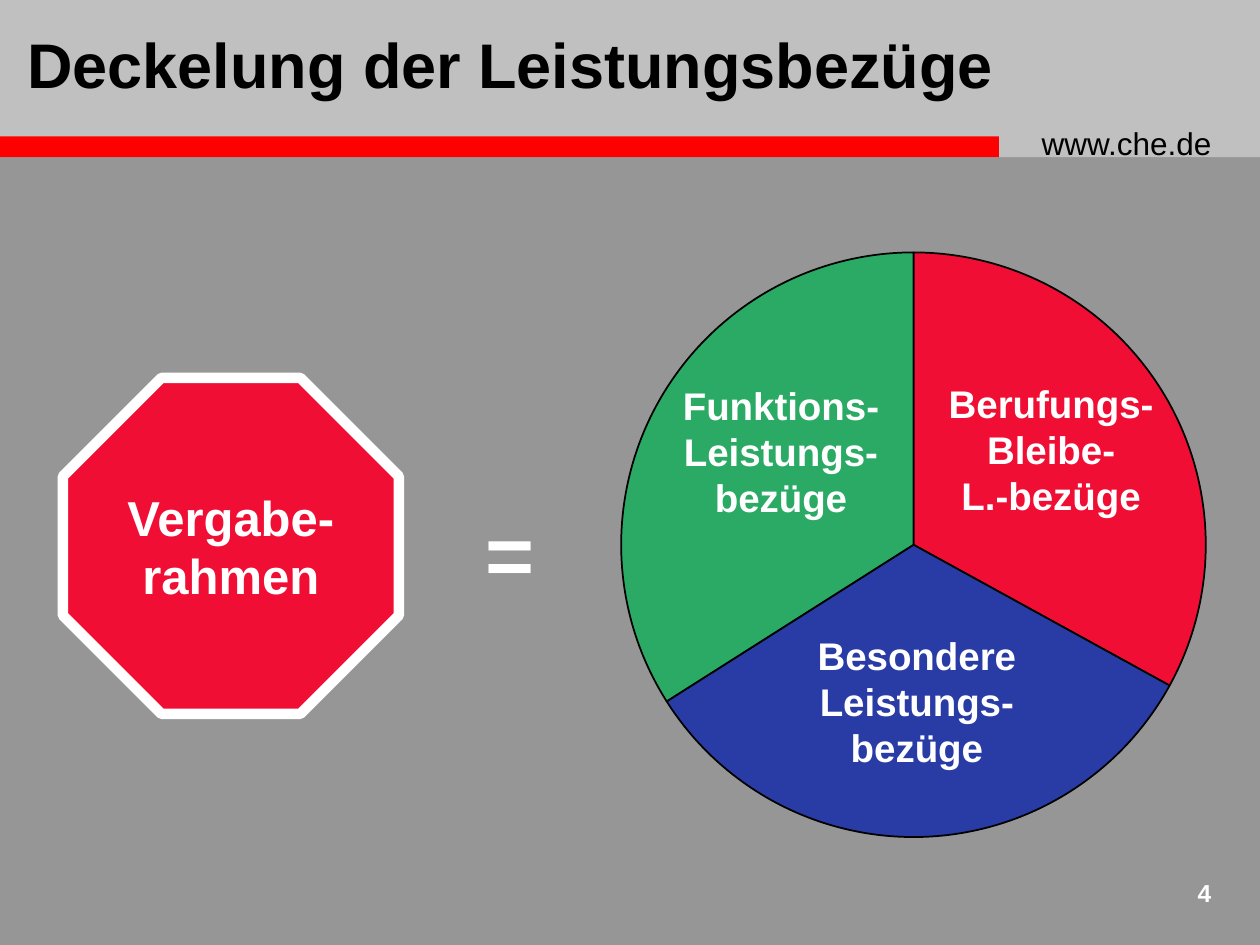
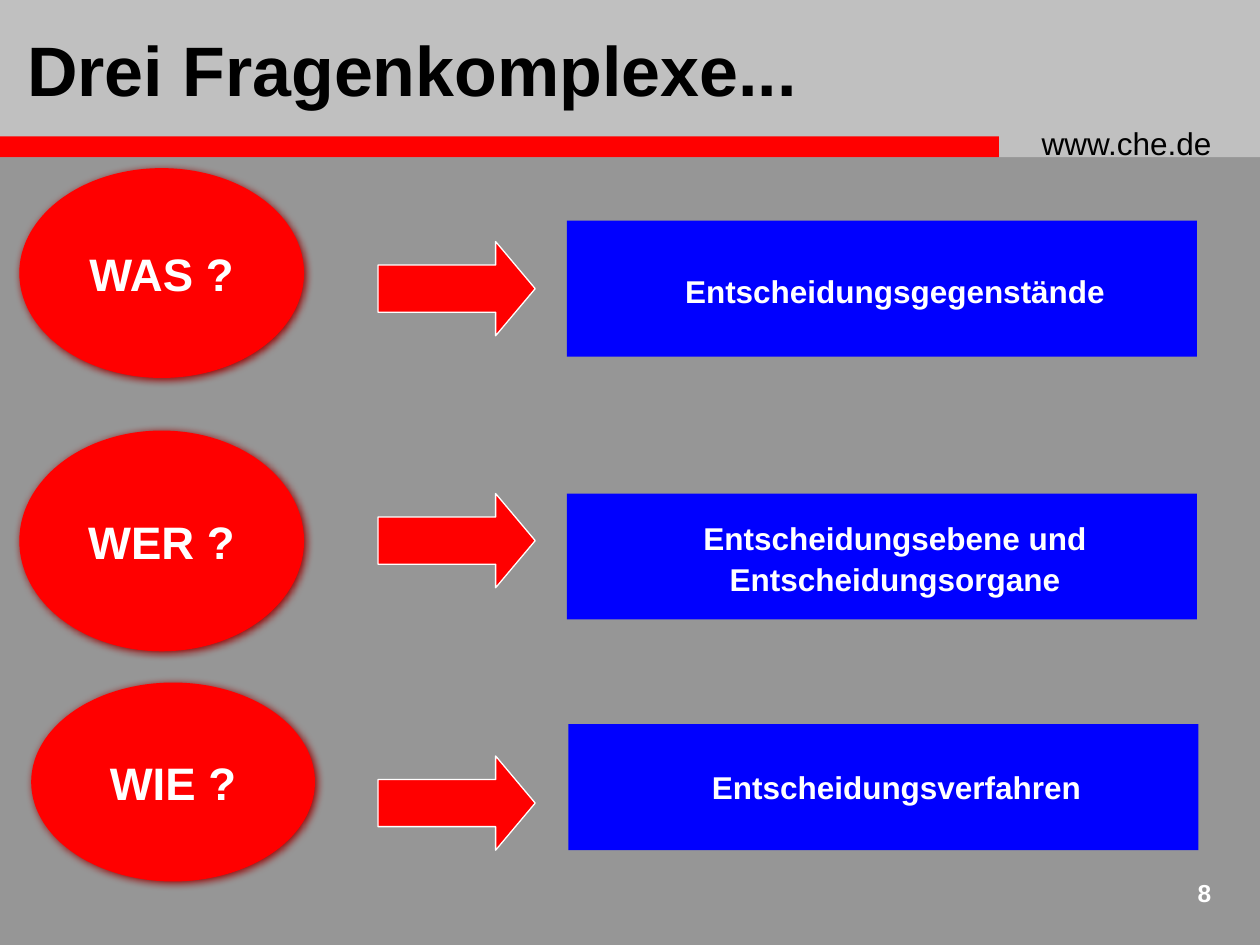
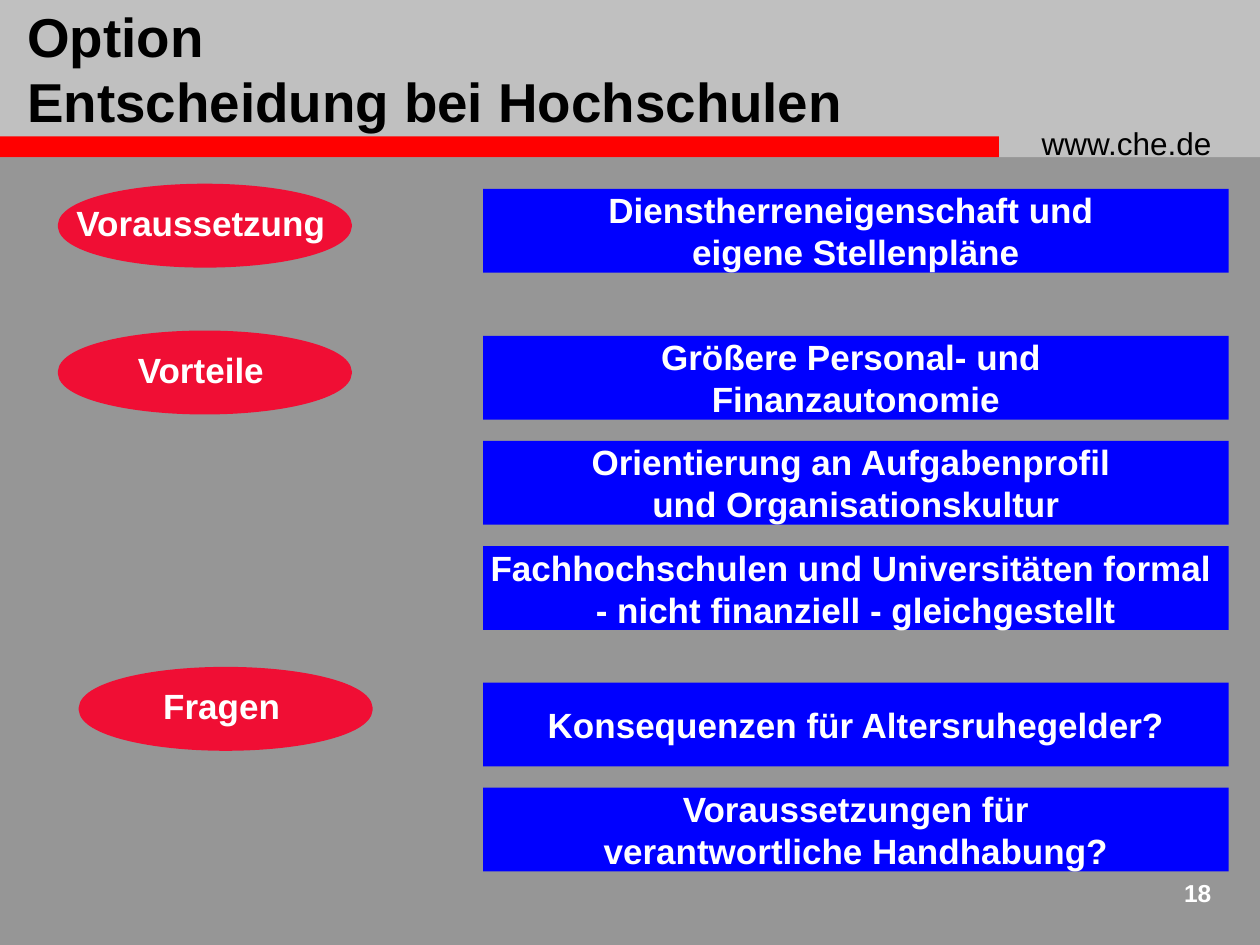
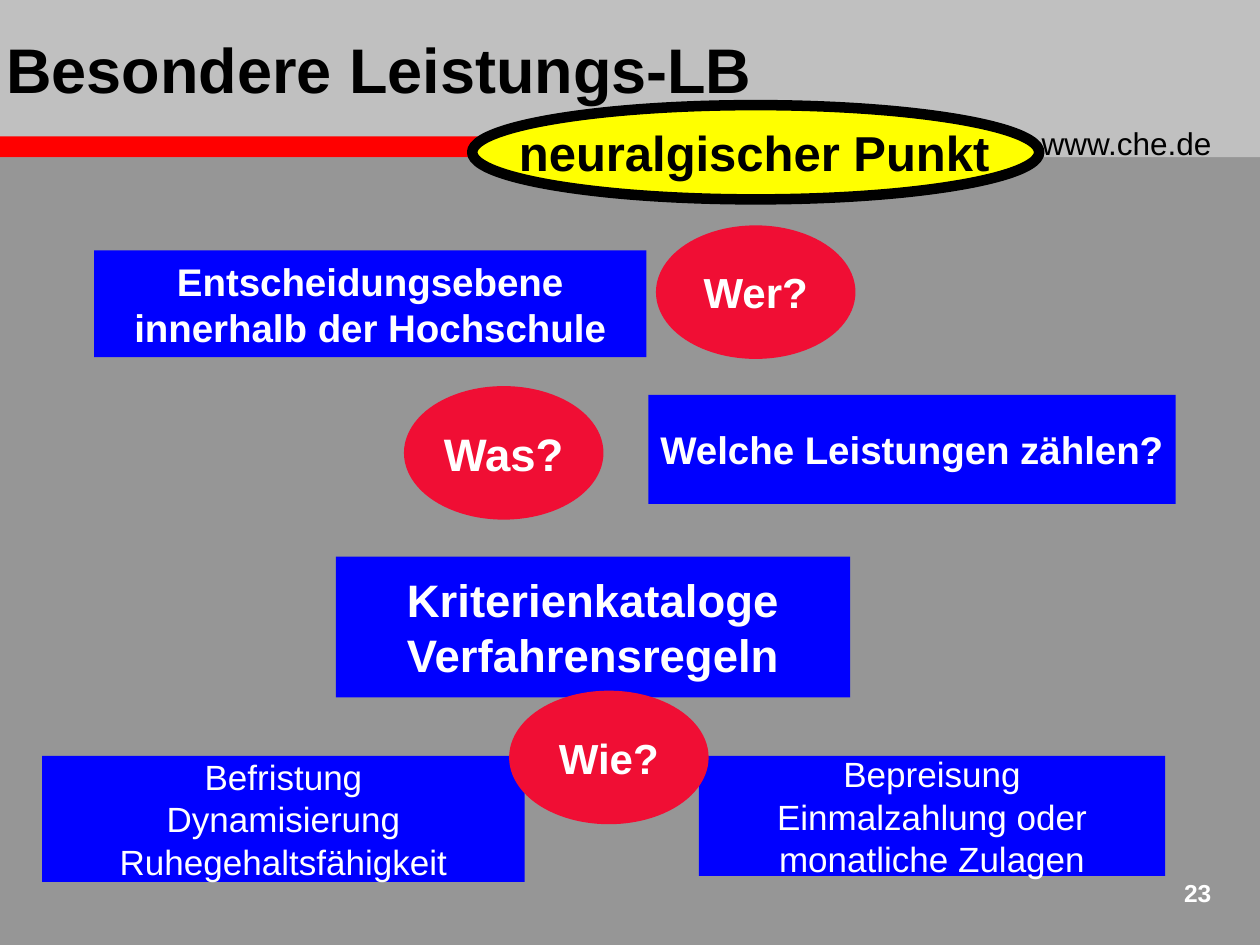
from lxml import etree
from pptx import Presentation
from pptx import util as u
from pptx.chart.data import CategoryChartData
from pptx.dml.color import RGBColor
from pptx.enum import chart as charts
from pptx.enum import shapes, text
from pptx.oxml import parse_xml
from pptx.oxml.ns import nsdecls, qn

FONT = "Arial"
COLORS = {
    "background": "969696",
    "header": "C0C0C0",
    "red": "FF0000",
    "crimson": "F00E34",
    "blue": "0000FF",
    "navy": "293BA5",
    "green": "2AAA64",
    "yellow": "FFFF00",
    "black": "000000",
    "white": "FFFFFF",
    "shadow": "990000",
}
RECTANGLE = shapes.MSO_SHAPE.RECTANGLE
OVAL = shapes.MSO_SHAPE.OVAL
ALIGN = text.PP_ALIGN
ANCHOR = text.MSO_ANCHOR


def color(name):
    return RGBColor.from_string(COLORS[name])


def lengths(*values):
    return [u.Cm(value) for value in values]


def write_text(shape, content, size=20, ink="white", bold=True, align=ALIGN.CENTER,
               anchor=ANCHOR.MIDDLE, wrap=False, inset=0, extra_right=0, extra_bottom=0,
               line_spacing=None, indent=None):
    frame = shape.text_frame
    frame.auto_size = text.MSO_AUTO_SIZE.NONE
    frame.word_wrap = wrap
    frame.vertical_anchor = anchor
    frame.margin_left = frame.margin_top = u.Cm(inset)
    frame.margin_right = u.Cm(inset + extra_right)
    frame.margin_bottom = u.Cm(inset + extra_bottom)
    frame.text = content
    for paragraph in frame.paragraphs:
        paragraph.alignment = align
        if line_spacing:
            paragraph.line_spacing = line_spacing
        if indent:
            properties = paragraph._p.get_or_add_pPr()
            properties.set("marL", "0")
            properties.set("indent", str(u.Cm(indent)))
        for run in paragraph.runs:
            run.font.name = FONT
            run.font.size = u.Pt(size)
            run.font.bold = bold
            run.font.color.rgb = color(ink)


def add_text(slide, box, content, **format):
    shape = slide.shapes.add_textbox(*lengths(*box))
    write_text(shape, content, **{"inset": 0.13, **format})
    return shape


def add_box(slide, kind, box, fill, content="", line=None, line_width=6, **format):
    shape = slide.shapes.add_shape(kind, *lengths(*box))
    shape.shadow.inherit = False
    shape.fill.solid()
    shape.fill.fore_color.rgb = color(fill)
    if line:
        shape.line.color.rgb = color(line)
        shape.line.width = u.Pt(line_width)
    else:
        shape.line.fill.background()
    if content:
        write_text(shape, content, **format)
    return shape


def add_answer(slide, box, content, **format):
    return add_box(slide, RECTANGLE, box, "blue", content, **format)


def add_keyword(slide, box, content, **format):
    return add_box(slide, OVAL, box, "crimson", content, line="crimson", **format)


def add_glow(shape):
    effects = shape.element.spPr.find(qn("a:effectLst"))
    glow = etree.SubElement(effects, qn("a:outerShdw"), blurRad=str(u.Pt(5)),
                            dist=str(u.Pt(1.4)), dir="2700000")
    etree.SubElement(glow, qn("a:srgbClr"), val=COLORS["shadow"])


def format_wedge(wedge, fill):
    wedge.fill.solid()
    wedge.fill.fore_color.rgb = color(fill)
    wedge.line.color.rgb = color("black")
    wedge.line.width = u.Pt(1)


def add_pie(slide, box, rows, fills):
    data = CategoryChartData()
    data.categories = [str(number + 1) for number in range(len(fills))]
    for number, values in enumerate(rows, 1):
        data.add_series(f"Series {number}", values)
    chart = slide.shapes.add_chart(charts.XL_CHART_TYPE.PIE, *lengths(*box), data).chart
    chart.has_legend = False
    chart.has_title = False
    chart.font.name = FONT
    chart.font.size = u.Pt(10)
    chart.font.color.rgb = color("background")
    plot = chart.plots[0]
    plot.vary_by_categories = False
    series = plot.series[0]
    format_wedge(series.format, fills[0])
    for index, fill in enumerate(fills):
        format_wedge(series.points[index].format, fill)
    chart.replace_data(data)
    area = chart._chartSpace.chart.plotArea
    for layout in area.findall(qn("c:layout")):
        area.remove(layout)
    area.insert(0, parse_xml(
        f'<c:layout {nsdecls("c")}><c:manualLayout><c:layoutTarget val="inner"/>'
        '<c:xMode val="edge"/><c:yMode val="edge"/><c:x val="0.005"/><c:y val="0.005"/>'
        '<c:w val="0.99"/><c:h val="0.988"/></c:manualLayout></c:layout>'))


def prepare_layout(layout, slide):
    fill = layout.background.fill
    fill.solid()
    fill.fore_color.rgb = color("background")
    shared = [
        add_box(slide, RECTANGLE, (0, 0, 25.4, 3.17), "header"),
        add_box(slide, RECTANGLE, (0, 2.75, 20.14, 0.42), "red"),
        add_text(slide, (20.87, 2.37, 4.19, 0.97), "www.che.de", size=18, ink="black",
                 bold=False, align=ALIGN.LEFT, anchor=ANCHOR.TOP, wrap=True),
    ]
    for shape in shared:
        layout.shapes.element.append(shape.element)


def add_slide(presentation, title, number, size=36, left=0.42, line_spacing=None):
    layout = presentation.slide_layouts[5]
    slide = presentation.slides.add_slide(layout)
    if len(presentation.slides) == 1:
        prepare_layout(layout, slide)
    heading = slide.shapes.title
    heading.left, heading.top, heading.width, heading.height = lengths(left, 0, 20.52, 2.75)
    write_text(heading, title, size=size, ink="black", align=ALIGN.LEFT, wrap=True,
               inset=0.13, line_spacing=line_spacing)
    width = 0.28 + 0.28 * len(number)
    add_text(slide, (24.55 - width, 17.58, width, 0.81), number, size=14,
             align=ALIGN.RIGHT, anchor=ANCHOR.TOP)
    return slide


def build_cap(presentation):
    slide = add_slide(presentation, "Deckelung der Leistungsbezüge", "4", line_spacing=0.9)
    add_pie(slide, (12.45, 5.03, 11.93, 11.93),
            ((33, 33, 34), (29, 37, 33), (33, 34, 33)), ("crimson", "navy", "green"))
    for left, top, width, label in (
        (13.61, 7.61, 4.27, "Funktions-\nLeistungs-\nbezüge"),
        (18.98, 7.57, 4.42, "Berufungs-\nBleibe-\nL.-bezüge"),
        (16.34, 12.65, 4.29, "Besondere\nLeistungs-\nbezüge"),
    ):
        add_text(slide, (left, top, width, 2.97), label, size=22)
    add_box(slide, shapes.MSO_SHAPE.OCTAGON, (1.27, 7.62, 6.77, 6.77), "crimson",
            "Vergabe-\nrahmen", line="white", size=28)
    add_text(slide, (9.77, 10.06, 1.02, 2.13), "=", size=48)


def build_questions(presentation):
    slide = add_slide(presentation, "Drei Fragenkomplexe...", "8", size=40)
    for left, top, height, answer, spacing in (
        (11.43, 4.45, 2.74, "Entscheidungsgegenstände", 1.1),
        (11.43, 9.95, 2.54, "Entscheidungsebene und\nEntscheidungsorgane", 1.1),
        (11.46, 14.6, 2.54, "Entscheidungsverfahren", None),
    ):
        add_answer(slide, (left, top, 12.7, height), answer, size=18,
                   line_spacing=spacing, indent=0.53)
    for question, box, arrow_top in (
        ("WAS ?", (0.39, 3.39, 5.74, 4.23), 4.87),
        ("WER ?", (0.39, 8.68, 5.74, 4.45), 9.95),
        ("WIE ?", (0.63, 13.76, 5.72, 4.01), 15.24),
    ):
        add_glow(add_box(slide, OVAL, box, "red", question, size=26))
        arrow = add_box(slide, shapes.MSO_SHAPE.RIGHT_ARROW, (7.62, arrow_top, 3.17, 1.9),
                        "red", line="white", line_width=0.75)
        arrow.adjustments[1] = 0.42


def build_option(presentation):
    slide = add_slide(presentation, "Option\vEntscheidung bei Hochschulen", "18", size=31.3)
    sections = (
        ("Voraussetzung", 1.27, 3.81, 3.81, ("Dienstherreneigenschaft und \neigene Stellenpläne",)),
        ("Vorteile", 1.27, 6.77, 6.77, (
            "Größere Personal- und \nFinanzautonomie",
            "Orientierung an Aufgabenprofil \nund Organisationskultur",
            "Fachhochschulen und Universitäten formal \n- nicht finanziell - gleichgestellt",
        )),
        ("Fragen", 1.69, 13.55, 13.76, (
            "Konsequenzen für Altersruhegelder?",
            "Voraussetzungen für\nverantwortliche Handhabung?",
        )),
    )
    for keyword, left, top, first_answer, answers in sections:
        add_keyword(slide, (left, top, 5.72, 1.48), keyword,
                    extra_right=0.16, extra_bottom=0.12)
        for row, answer in enumerate(answers):
            add_answer(slide, (9.74, first_answer + 2.12 * row, 15.03, 1.69), answer)


def build_special(presentation):
    slide = add_slide(presentation, "Besondere Leistungs-LB", "23", left=0)
    for box, answer, size, bold in (
        ((1.9, 5.05, 11.13, 2.15), "Entscheidungsebene\ninnerhalb der Hochschule", 22, True),
        ((13.07, 7.96, 10.63, 2.2), "Welche Leistungen zählen?", 22, True),
        ((0.85, 15.24, 9.73, 2.54), "Befristung\nDynamisierung\nRuhegehaltsfähigkeit", 20, False),
        ((14.09, 15.24, 9.4, 2.42), "Bepreisung\nEinmalzahlung oder\nmonatliche Zulagen", 20, False),
        ((6.77, 11.22, 10.37, 2.84), "Kriterienkataloge\nVerfahrensregeln", 26, True),
    ):
        add_answer(slide, box, answer, size=size, bold=bold)
    add_box(slide, OVAL, (9.52, 2.12, 11.43, 1.9), "yellow", "neuralgischer Punkt",
            line="black", size=28, ink="black", extra_right=0.06)
    for left, top, question, size in (
        (13.33, 4.65, "Wer?", 24),
        (8.25, 7.89, "Was?", 26),
        (10.37, 14.03, "Wie?", 24),
    ):
        add_keyword(slide, (left, top, 3.81, 2.48), question, size=size)


def main():
    presentation = Presentation()
    presentation.slide_width, presentation.slide_height = lengths(25.4, 19.05)
    build_cap(presentation)
    build_questions(presentation)
    build_option(presentation)
    build_special(presentation)
    presentation.save("out.pptx")


if __name__ == "__main__":
    main()
